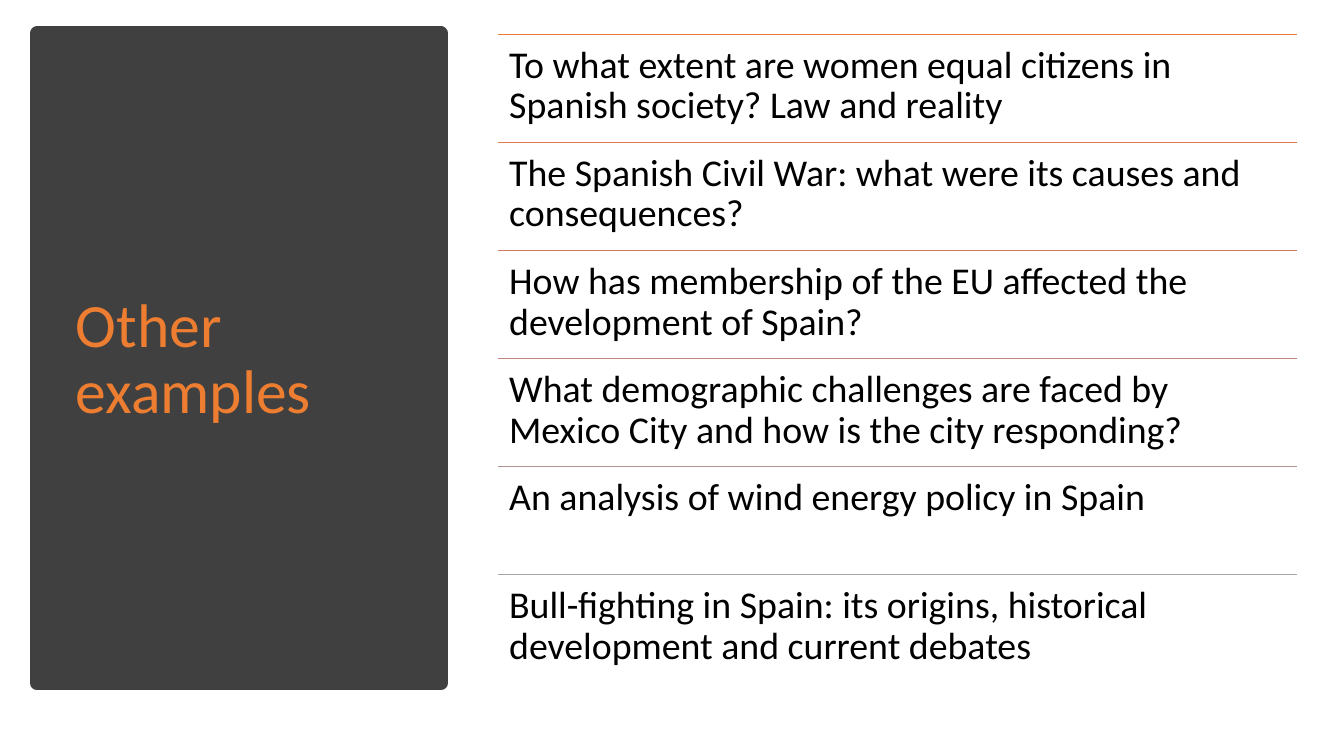
from pptx import Presentation
from pptx.dml.color import RGBColor
from pptx.enum import shapes, text
from pptx.oxml import ns, xmlchemy
from pptx.util import Inches, Pt

HUES = {
    "panel": "404040",
    "title": "ED7D31",
    "body": "000000",
}

# Each topic with the colour of the rule above it
TOPICS = [
    ("To what extent are women equal citizens in Spanish society? Law and reality", "ED7D31"),
    ("The Spanish Civil War: what were its causes and consequences?", "DC7A4B"),
    ("How has membership of the EU affected the development of Spain?", "CC7D64"),
    ("What demographic challenges are faced by Mexico City and how is the city responding?", "BD867B"),
    ("An analysis of wind energy policy in Spain", "B09391"),
    ("Bull-fighting in Spain: its origins, historical development and current debates", "A5A5A5"),
]

LEFT, WIDTH = 4.94, 7.92
TOP, LAST = 0.34, 5.7
STEP = (LAST - TOP) / (len(TOPICS) - 1)


def apply(item, values):
    for name, value in values.items():
        setattr(item, name, value)


def write(frame, words, size, hue, anchor, inset):
    apply(frame, {
        "word_wrap": True,
        "auto_size": text.MSO_AUTO_SIZE.NONE,
        "vertical_anchor": anchor,
        "margin_left": Inches(inset),
        "margin_right": Inches(inset),
    })
    frame.text = words
    para = frame.paragraphs[0]
    apply(para, {"line_spacing": 0.9, "alignment": text.PP_ALIGN.LEFT})
    font = para.runs[0].font
    apply(font, {"name": "Calibri", "size": Pt(size)})
    font.color.rgb = RGBColor.from_string(hue)


def add_panel(slide):
    panel = slide.shapes.add_shape(
        shapes.MSO_SHAPE.RECTANGLE,
        Inches(0.37), Inches(0.33), Inches(4), Inches(6.45))
    panel.shadow.inherit = False
    hue = RGBColor.from_string(HUES["panel"])
    panel.fill.solid()
    panel.fill.fore_color.rgb = hue
    panel.line.color.rgb = hue
    panel.line.width = Pt(10)
    # Send the panel behind the title
    slide.shapes.element.insert(2, panel.element)


def add_title(slide):
    title = slide.shapes.title
    apply(title, {
        "left": Inches(0.65), "top": Inches(0.7),
        "width": Inches(3.46), "height": Inches(5.75),
    })
    write(title.text_frame, "Other examples", 44, HUES["title"],
          text.MSO_ANCHOR.MIDDLE, 0.1)


def add_rule(slide, top, hue):
    rule = slide.shapes.add_connector(
        shapes.MSO_CONNECTOR.STRAIGHT,
        Inches(LEFT), Inches(top), Inches(LEFT + WIDTH), Inches(top))
    rule.line.color.rgb = RGBColor.from_string(hue)
    rule.line.width = Pt(1)
    rule.element.spPr.append(xmlchemy.OxmlElement("a:effectLst"))


def add_topic(slide, top, words):
    box = slide.shapes.add_textbox(
        Inches(LEFT), Inches(top), Inches(WIDTH), Inches(STEP))
    frame = box.text_frame
    apply(frame, {"margin_top": Inches(0.11), "margin_bottom": Inches(0.11)})
    write(frame, words, 27, HUES["body"], text.MSO_ANCHOR.TOP, 0.11)


def main():
    deck = Presentation()
    apply(deck, {"slide_width": Inches(13.33), "slide_height": Inches(7.5)})
    slide = deck.slides.add_slide(deck.slide_layouts[5])

    # Left side: dark panel with the title
    add_panel(slide)
    add_title(slide)

    # Right side: ruled list of topics
    for row, (words, hue) in enumerate(TOPICS):
        top = TOP + row * STEP
        add_rule(slide, top, hue)
        add_topic(slide, top, words)

    deck.save("out.pptx")


if __name__ == "__main__":
    main()
